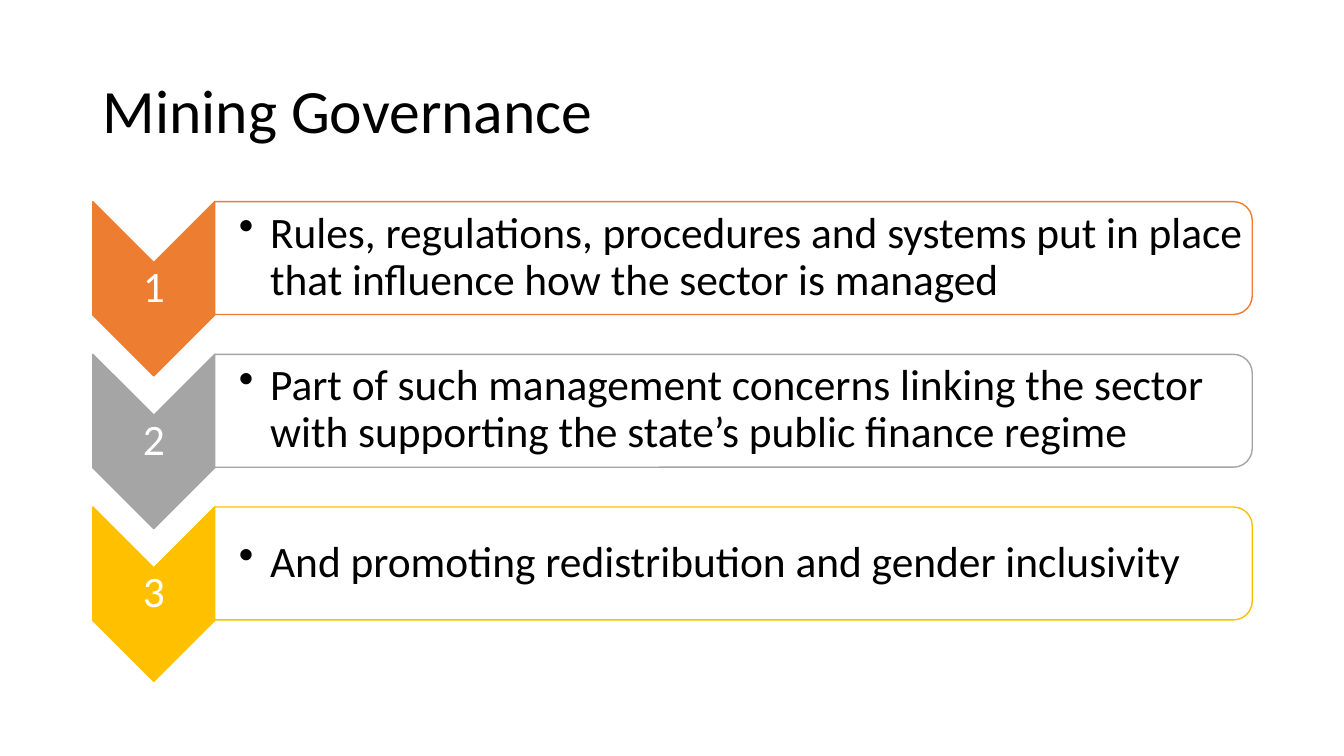
import pptx
import pptx.util
import pptx.dml.color
import pptx.enum.shapes
import pptx.enum.text
import pptx.oxml
import pptx.oxml.ns

Inches = pptx.util.Inches
Pt = pptx.util.Pt
SHAPES = pptx.enum.shapes.MSO_SHAPE
ALIGN = pptx.enum.text.PP_ALIGN

COLORS = {
    "text": "000000",
    "white": "FFFFFF",
    "orange": "ED7D31",
    "gray": "A5A5A5",
    "gold": "FFC000",
}

presentation = pptx.Presentation()
presentation.slide_width = Inches(13.33)
presentation.slide_height = Inches(7.5)
slide = presentation.slides.add_slide(presentation.slide_layouts[6])


def rgb(name):
    return pptx.dml.color.RGBColor.from_string(COLORS[name])


def add_text(text, left, top, width, height, size=31, color="text",
             align=ALIGN.LEFT, insets=(0.02, 0.02), bullet=False):
    box = slide.shapes.add_textbox(Inches(left), Inches(top), Inches(width), Inches(height))
    frame = box.text_frame
    frame.word_wrap = True
    frame.vertical_anchor = pptx.enum.text.MSO_ANCHOR.MIDDLE
    frame.margin_left = Inches(insets[0])
    frame.margin_right = frame.margin_top = frame.margin_bottom = Inches(insets[1])
    paragraph = frame.paragraphs[0]
    paragraph.alignment = align
    paragraph.line_spacing = 0.9
    run = paragraph.add_run()
    run.text = text
    run.font.name = "Calibri"
    run.font.size = Pt(size)
    run.font.color.rgb = rgb(color)
    if bullet:
        properties = paragraph._p.get_or_add_pPr()
        properties.set("marL", str(Inches(0.31)))
        properties.set("indent", str(-Inches(0.31)))
        character = pptx.oxml.parse_xml(
            f'<a:buChar {pptx.oxml.ns.nsdecls("a")} char="•"/>')
        properties.append(character)


def add_turned_shape(kind, left, top, width, height, fill, line):
    shape = slide.shapes.add_shape(
        kind, Inches(left + (width - height) / 2), Inches(top + (height - width) / 2),
        Inches(height), Inches(width))
    shape.rotation = 90
    shape.shadow.inherit = False
    shape.fill.solid()
    shape.fill.fore_color.rgb = rgb(fill)
    shape.line.color.rgb = rgb(line)
    shape.line.width = Pt(1)


add_text("Mining Governance", 0.92, 0.4, 11.5, 1.45, size=44, insets=(0.1, 0.05))

steps = [
    ("orange", "Rules, regulations, procedures and systems put in place that influence how the sector is managed"),
    ("gray", "Part of such management concerns linking the sector with supporting the state’s public finance regime"),
    ("gold", "And promoting redistribution and gender inclusivity"),
]
first_top = 2.0
step_pitch = 1.515

for index, (color, statement) in enumerate(steps):
    top = first_top + index * step_pitch
    add_turned_shape(SHAPES.CHEVRON, 0.92, top, 1.21, 1.73, color, color)
    add_text(str(index + 1), 0.92, top + 0.6, 1.21, 0.52, color="white", align=ALIGN.CENTER)
    add_turned_shape(SHAPES.ROUND_2_SAME_RECTANGLE, 2.13, top, 10.29, 1.12, "white", color)
    add_text(statement, 2.13, top + 0.05, 10.24, 1.01, insets=(0.24, 0.02), bullet=True)

presentation.save("out.pptx")
